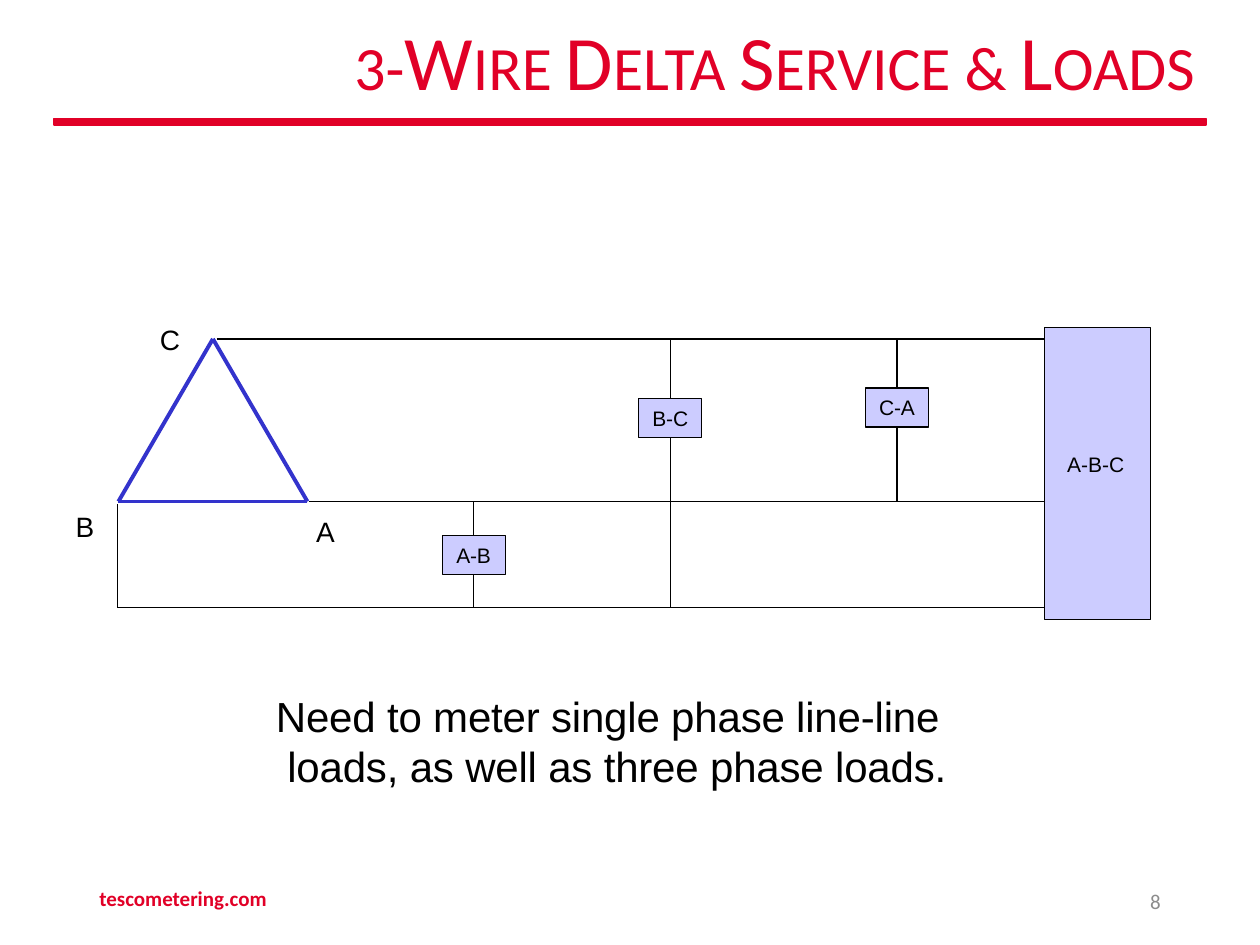
import pptx
import pptx.util
import pptx.dml.color
import pptx.oxml.ns
from pptx.enum.shapes import MSO_CONNECTOR, MSO_SHAPE
from pptx.enum.text import MSO_ANCHOR, PP_ALIGN
from pptx.util import Inches

RED, BLACK, LILAC, BLUE = "E10027", "000000", "CCCCFF", "3333CC"
TOP, BOTTOM = 0, 2  # connection sites of a rectangle


def rgb(value):
    return pptx.dml.color.RGBColor.from_string(value)


def write_text(box, text, size=12, font="Arial", color=BLACK, bold=False,
               align=PP_ALIGN.LEFT, anchor=MSO_ANCHOR.TOP, margins=(0, 0, 0, 0),
               line_spacing=None, tracking=None, small_caps=False):
    frame = box.text_frame
    frame.word_wrap = True
    frame.vertical_anchor = anchor
    (frame.margin_left, frame.margin_top,
     frame.margin_right, frame.margin_bottom) = map(Inches, margins)
    para = frame.paragraphs[0]
    para.text = text
    para.alignment = align
    if line_spacing:
        para.line_spacing = line_spacing
    for span in para.runs:
        span.font.size = pptx.util.Pt(size)
        span.font.name = font
        span.font.bold = bold
        span.font.color.rgb = rgb(color)
        properties = span._r.get_or_add_rPr()
        if tracking is not None:
            properties.set("spc", str(round(tracking * 100)))
        if small_caps:
            properties.set("cap", "small")


def add_text(page, left, top, width, height, text, **style):
    box = page.shapes.add_textbox(*map(Inches, (left, top, width, height)))
    write_text(box, text, **style)


def add_rectangle(page, left, top, width, height, fill, line, line_width):
    box = page.shapes.add_shape(
        MSO_SHAPE.RECTANGLE, *map(Inches, (left, top, width, height)))
    box.shadow.inherit = False
    box.fill.solid()
    box.fill.fore_color.rgb = rgb(fill)
    box.line.color.rgb = rgb(line)
    box.line.width = pptx.util.Pt(line_width)
    return box


def add_wire(page, x1, y1, x2, y2, color=BLACK, width=0.72):
    wire = page.shapes.add_connector(
        MSO_CONNECTOR.STRAIGHT, *map(Inches, (x1, y1, x2, y2)))
    wire.line.color.rgb = rgb(color)
    wire.line.width = pptx.util.Pt(width)
    properties = wire._element.spPr
    properties.append(properties.makeelement(pptx.oxml.ns.qn("a:effectLst"), {}))
    return wire


def add_header(page, left, top, width, height):
    title = page.shapes.title
    title.left, title.top, title.width, title.height = map(
        Inches, (left + 1.27, top, width - 1.26, height - 0.1))
    write_text(title, "3-Wire Delta Service & Loads", size=44, font="Calibri",
               color=RED, align=PP_ALIGN.RIGHT, anchor=MSO_ANCHOR.MIDDLE,
               margins=(0.1, 0.05, 0.1, 0.05), line_spacing=0.9, small_caps=True)
    add_rectangle(page, left, top + height - 0.05, width, 0.05, RED, RED, 1)


def add_load(page, text, left, top, upper, lower):
    """A single-phase load wired between the lines at heights upper and lower."""
    width, height = 0.5, 0.31
    box = add_rectangle(page, left, top, width, height, LILAC, BLACK, 0.72)
    write_text(box, text, align=PP_ALIGN.CENTER, anchor=MSO_ANCHOR.MIDDLE,
               tracking=-0.1)
    middle = left + width / 2
    add_wire(page, middle, upper, middle, top).end_connect(box, TOP)
    add_wire(page, middle, top + height, middle, lower).begin_connect(box, BOTTOM)


def add_circuit(page, left, top, width, height):
    right = left + width
    line_c, line_a, line_b = top + 0.09, top + 1.38, top + 2.22

    # Three-phase load
    add_rectangle(page, right - 0.84, top, 0.84, height, LILAC, BLACK, 0.72)
    add_text(page, right - 0.66, top + 0.96, 0.6, 0.23, "A-B-C",
             margins=(0, 0.02, 0, 0))

    # Phase lines from the delta to the load
    load_side = right - 0.84
    for start, line in ((1.72, line_c), (2.45, line_a), (left, line_b)):
        add_wire(page, start, line, load_side, line)
    add_wire(page, left, line_a + 0.02, left, line_b)

    # Single-phase loads
    add_load(page, "A-B", 3.51, 4.25, line_a, line_b)
    add_load(page, "C-A", 6.87, 3.08, line_c, line_a)
    add_load(page, "B-C", 5.07, 3.16, line_c, line_b)

    # Delta source
    corners = [(left + 0.01, line_a), (left + 0.76, line_c), (left + 1.51, line_a)]
    for start, end in zip(corners, corners[1:] + corners[:1]):
        add_wire(page, *start, *end, color=BLUE, width=2.25)
    for text, x, y in (("A", 2.51, 4.06), ("B", 0.6, 4.02), ("C", 1.27, 2.54)):
        add_text(page, x, y, 0.2, 0.29, text, size=16, tracking=-0.1,
                 margins=(0, 0.02, 0, 0))


def add_description(page, left, top, width, height):
    add_text(page, left, top, width, height,
             "Need to meter single phase line-line\v"
             " loads, as well as three phase loads.",
             size=24, tracking=-0.1, margins=(0.01, 0.06, 0, 0),
             line_spacing=pptx.util.Pt(28.6))


def add_footer(page, left, top, width, height):
    style = dict(font="Calibri", anchor=MSO_ANCHOR.MIDDLE,
                 margins=(0.1, 0.05, 0.1, 0.05))
    add_text(page, left, top, 3.38, height, "tescometering.com",
             color=RED, bold=True, **style)
    add_text(page, left + width - 2.25, top + 0.02, 2.25, height, "8",
             color="8C8C8C", align=PP_ALIGN.RIGHT, **style)


def main():
    deck = pptx.Presentation()
    deck.slide_width, deck.slide_height = Inches(10), Inches(7.5)
    page = deck.slides.add_slide(deck.slide_layouts.get_by_name("Title Only"))
    add_header(page, 0.43, 0.15, 9.14, 0.84)
    add_circuit(page, 0.93, 2.6, 8.2, 2.32)
    add_description(page, 2.18, 5.42, 5.35, 1.25)
    add_footer(page, 0.69, 6.93, 8.62, 0.4)
    deck.save("out.pptx")


if __name__ == "__main__":
    main()
